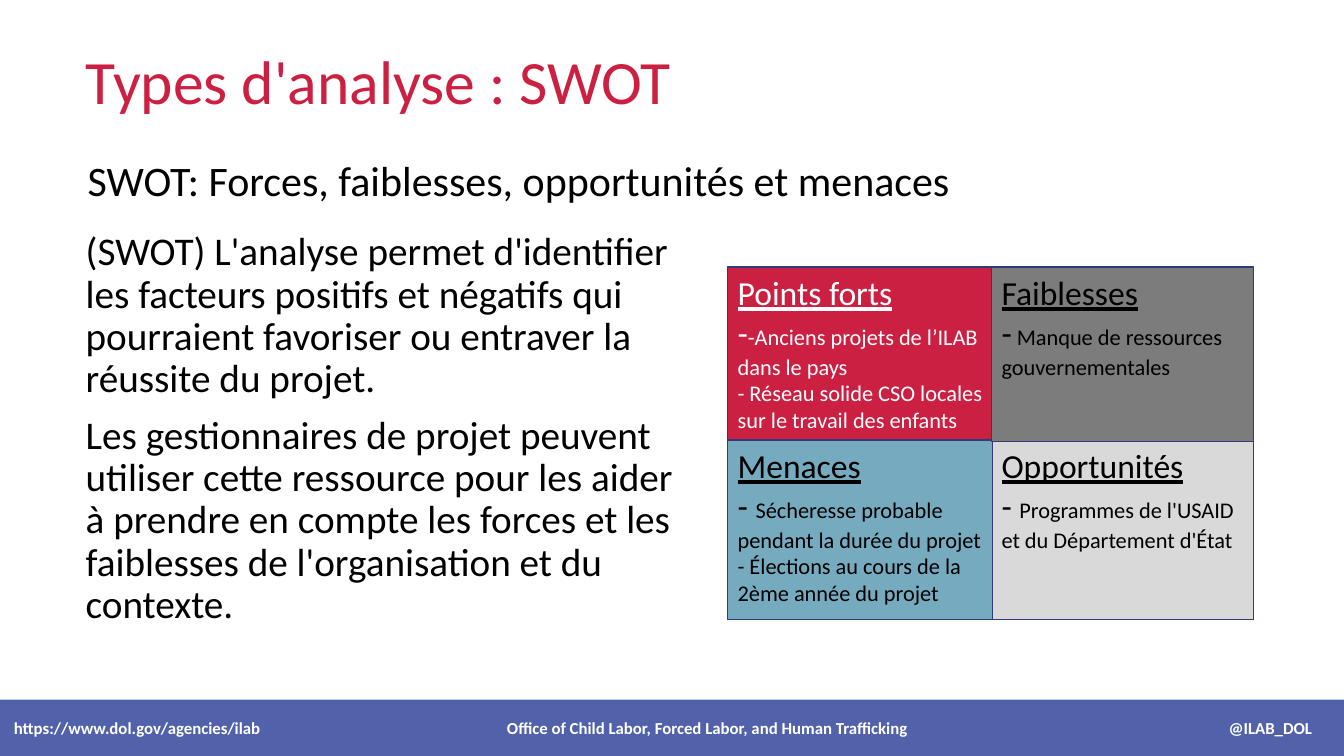
from collections import namedtuple

from lxml import etree
from pptx import Presentation
from pptx.dml.color import RGBColor
from pptx.enum.shapes import MSO_SHAPE
from pptx.enum.text import MSO_ANCHOR, MSO_AUTO_SIZE, PP_ALIGN
from pptx.oxml.ns import qn
from pptx.util import Cm, Pt

RECTANGLE = MSO_SHAPE.RECTANGLE
TOP, MIDDLE = MSO_ANCHOR.TOP, MSO_ANCHOR.MIDDLE
NO_FIT = MSO_AUTO_SIZE.NONE
LEFT, CENTER, RIGHT = PP_ALIGN.LEFT, PP_ALIGN.CENTER, PP_ALIGN.RIGHT

RED = RGBColor(0xCB, 0x20, 0x42)
GREY = RGBColor(0x7C, 0x7C, 0x7C)
TEAL = RGBColor(0x76, 0xAB, 0xBF)
SILVER = RGBColor(0xD9, 0xD9, 0xD9)
NAVY = RGBColor(0x2F, 0x3C, 0x78)
INDIGO = RGBColor(0x3F, 0x51, 0xA2)
BLACK = RGBColor(0, 0, 0)
WHITE = RGBColor(0xFF, 0xFF, 0xFF)

FONT = "Calibri"
Box = namedtuple("Box", "left top width height")

TITLE = "Types d'analyse : SWOT"
SUBTITLE = "SWOT: Forces, faiblesses, opportunités et menaces"
BODY = [
    "(SWOT) L'analyse permet d'identifier les facteurs positifs et négatifs qui "
    "pourraient favoriser ou entraver la réussite du projet.",
    "Les gestionnaires de projet peuvent utiliser cette ressource pour les aider à "
    "prendre en compte les forces et les faiblesses de l'organisation et du contexte.",
]
COLUMNS = [(0, 6.68), (6.65, 6.6)]
ROWS = [(0, 4.39), (4.36, 4.53)]
QUADRANTS = [
    (0, 0, RED, WHITE, "Points forts", "-", "-Anciens projets de l’ILAB dans le pays",
     ["- Réseau solide CSO locales sur le travail des enfants"]),
    (1, 1, SILVER, BLACK, "Opportunités", "- ",
     "Programmes de l'USAID et du Département d'État", []),
    (0, 1, TEAL, BLACK, "Menaces", "- ", "Sécheresse probable pendant la durée du projet",
     ["- Élections au cours de la 2ème année du projet"]),
    (1, 0, GREY, BLACK, "Faiblesses", "-", " Manque de ressources gouvernementales", []),
]
FOOTER = [
    ("https://www.dol.gov/agencies/ilab", LEFT, 0.2, 9),
    ("Office of Child Labor, Forced Labor, and Human Trafficking", CENTER, 11.43, 13),
    ("@ILAB_DOL", RIGHT, 27.42, 6),
]


def in_cm(box):
    return [Cm(length) for length in box]


def set_values(target, values):
    for name, value in values.items():
        setattr(target, name, value)


def add_span(para, text, size, color, **values):
    span = para.add_run()
    span.text = text
    set_values(span.font, {"name": FONT, "size": Pt(size), **values})
    span.font.color.rgb = color


def write_paragraphs(frame, paragraphs, anchor=TOP, **values):
    set_values(frame, {"word_wrap": True, "auto_size": NO_FIT, "vertical_anchor": anchor})
    for index, spans in enumerate(paragraphs):
        para = frame.add_paragraph() if index else frame.paragraphs[0]
        set_values(para, {"alignment": LEFT, **values})
        for text, size, color, style in spans:
            add_span(para, text, size, color, **style)


def add_panel(shapes, box, color):
    panel = shapes.add_shape(RECTANGLE, *in_cm(box))
    panel.shadow.inherit = False
    panel.fill.solid()
    panel.fill.fore_color.rgb = color
    return panel


def place_title(slide, box):
    title = slide.shapes.title
    set_values(title, dict(zip(box._fields, in_cm(box))))
    write_paragraphs(title.text_frame, [[(TITLE, 44, RED, {})]], MIDDLE, line_spacing=0.9)


def place_subtitle(slide, box):
    frame = slide.shapes.add_textbox(*in_cm(box)).text_frame
    write_paragraphs(frame, [[(SUBTITLE, 30, BLACK, {})]], space_before=Pt(6))


def place_body(slide, box):
    frame = slide.shapes.add_textbox(*in_cm(box)).text_frame
    paragraphs = [[(text, 28, BLACK, {})] for text in BODY]
    write_paragraphs(frame, paragraphs, line_spacing=0.9, space_before=Pt(10))


def place_matrix(slide, box):
    matrix = slide.shapes.add_group_shape()
    for column, row, fill, ink, heading, dash, first, others in QUADRANTS:
        across, width = COLUMNS[column]
        down, height = ROWS[row]
        cell = Box(box.left + across, box.top + down, width, height)
        panel = add_panel(matrix.shapes, cell, fill)
        panel.line.color.rgb = NAVY
        panel.line.width = Pt(1)
        paragraphs = [
            [(heading, 24, ink, {"underline": True})],
            [(dash, 24, ink, {}), (first, 16, ink, {})],
        ]
        paragraphs += [[(text, 16, ink, {})] for text in others]
        write_paragraphs(panel.text_frame, paragraphs)


def place_footer(slide, box):
    bar = add_panel(slide.shapes, box, INDIGO)
    bar.line.fill.background()
    color = bar._element.spPr.find(qn("a:solidFill"))[0]
    etree.SubElement(color, qn("a:alpha")).set("val", "90000")
    for text, alignment, offset, width in FOOTER:
        part = Box(box.left + offset, box.top, width, box.height)
        frame = slide.shapes.add_textbox(*in_cm(part)).text_frame
        write_paragraphs(frame, [[(text, 12, WHITE, {"bold": True})]], MIDDLE,
                         alignment=alignment)


def main():
    deck = Presentation()
    set_values(deck, {"slide_width": Cm(33.87), "slide_height": Cm(19.05)})
    slide = deck.slides.add_slide(deck.slide_layouts[5])
    place_title(slide, Box(1.91, 0.66, 23.72, 2.92))
    place_subtitle(slide, Box(1.96, 3.76, 27.15, 1.83))
    place_body(slide, Box(1.91, 5.72, 15.37, 10.77))
    place_matrix(slide, Box(18.34, 6.73, 13.25, 8.89))
    place_footer(slide, Box(-0.1, 17.63, 33.97, 1.42))
    deck.save("out.pptx")


if __name__ == "__main__":
    main()
